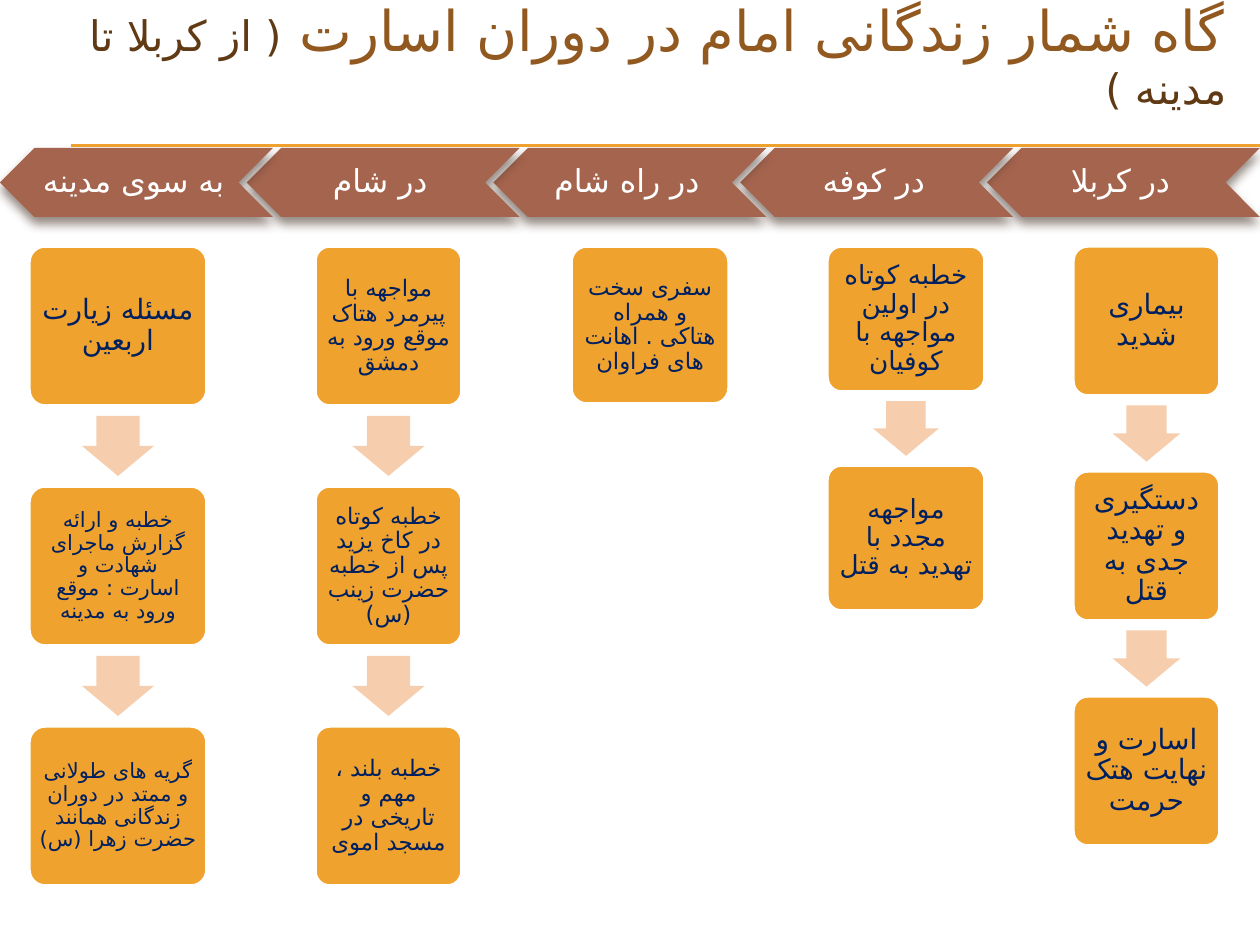
"""Build the right-to-left timeline slide of the captivity period."""
from dataclasses import dataclass
from typing import Optional

from lxml.etree import SubElement
from pptx import Presentation
from pptx.dml.color import RGBColor
from pptx.enum.shapes import MSO_CONNECTOR, MSO_SHAPE
from pptx.enum.text import MSO_ANCHOR, MSO_AUTO_SIZE, PP_ALIGN
from pptx.oxml.ns import qn
from pptx.util import Emu, Pt

GOLD = RGBColor(0xF0, 0xA2, 0x2E)
PEACH = RGBColor(0xF6, 0xCE, 0xAD)
RUST = RGBColor(0xA5, 0x64, 0x4E)
SHADOW = RGBColor(0x4E, 0x3B, 0x30)
BROWN = RGBColor(0x91, 0x58, 0x1F)
DARK_BROWN = RGBColor(0x60, 0x3A, 0x14)
NAVY = RGBColor(0x00, 0x20, 0x60)
WHITE = RGBColor(0xFF, 0xFF, 0xFF)

PERSIAN_FONT = "DejaVu Sans"
SLIDE_WIDTH, SLIDE_HEIGHT = 1260, 945
STAGE_TOP, STAGE_WIDTH, STAGE_HEIGHT = 148, 273, 69
CARD_TOP = 246


@dataclass(frozen=True)
class Event:
    """One card: its wording and text size in points."""
    wording: str
    size: int


@dataclass(frozen=True)
class Stage:
    """One stage of the journey with its column of events."""
    name: str
    left: int
    width: int
    card_height: int
    events: tuple[Event, ...]


STAGES = (
    Stage("در کربلا", 1073, 147, 150, (
        Event("بیماری شدید", 16),
        Event("دستگیری و تهدید جدی به قتل", 16),
        Event("اسارت و نهایت هتک حرمت", 16))),
    Stage("در کوفه", 827, 158, 146, (
        Event("خطبه کوتاه در اولین مواجهه با کوفیان", 15),
        Event("مواجهه مجدد با تهدید به قتل", 15))),
    Stage("در راه شام", 571, 158, 158, (
        Event("سفری سخت و همراه هتاکی . اهانت های فراوان", 13),)),
    Stage("در شام", 315, 147, 160, (
        Event("مواجهه با پیرمرد هتاک موقع ورود به دمشق", 13),
        Event("خطبه کوتاه در کاخ یزید پس از خطبه حضرت زینب (س)", 13),
        Event("خطبه بلند ، مهم و تاریخی در مسجد اموی", 13))),
    Stage("به سوی مدینه", 29, 178, 160, (
        Event("مسئله زیارت اربعین", 16),
        Event("خطبه و ارائه گزارش ماجرای شهادت و اسارت : موقع ورود به مدینه", 12),
        Event("گریه های طولانی و ممتد در دوران زندگانی همانند حضرت زهرا (س)", 12))),
)


def px(length: float) -> Emu:
    """Turn px into EMU."""
    return Emu(round(length * 914400 / 126))


def add_run(paragraph, wording: str, size: int, font: str, color: RGBColor) -> None:
    """Add a run with its Latin font and the Persian one."""
    run = paragraph.add_run()
    run.text = wording
    run.font.size = Pt(size)
    run.font.name = font
    run.font.color.rgb = color
    SubElement(run.font._element, qn("a:cs"), typeface=PERSIAN_FONT)


def write(shape, wording: str, size: int, color: RGBColor,
          insets: tuple[int, int, int, int]) -> None:
    """Write one centred right-to-left paragraph inside a shape."""
    frame = shape.text_frame
    frame.word_wrap = True
    frame.vertical_anchor = MSO_ANCHOR.MIDDLE
    frame.margin_left, frame.margin_top, frame.margin_right, frame.margin_bottom = map(px, insets)
    paragraph = frame.paragraphs[0]
    paragraph.alignment = PP_ALIGN.CENTER
    paragraph.line_spacing = 0.9
    paragraph._p.get_or_add_pPr().set("rtl", "1")
    add_run(paragraph, wording, size, "Cabin", color)


def add_block(slide, kind: MSO_SHAPE, left: float, top: float, width: float, height: float,
              fill: RGBColor, outline: Optional[RGBColor] = None):
    """Add a flat filled shape, outlined when a colour is given."""
    shape = slide.shapes.add_shape(kind, px(left), px(top), px(width), px(height))
    shape.shadow.inherit = False
    shape.fill.solid()
    shape.fill.fore_color.rgb = fill
    if outline is None:
        shape.line.fill.background()
    else:
        shape.line.color.rgb = outline
        shape.line.width = Pt(2)
    return shape


def add_stage_header(slide, stage: Stage, left: float) -> None:
    """Add a left-pointing chevron with a soft shadow below."""
    header = add_block(slide, MSO_SHAPE.CHEVRON, left, STAGE_TOP, STAGE_WIDTH, STAGE_HEIGHT, RUST)
    properties = header._element.spPr
    properties.find(qn("a:xfrm")).set("flipH", "1")
    shadow = SubElement(properties.find(qn("a:effectLst")), qn("a:outerShdw"),
                        blurRad=str(Pt(6)), dist=str(Pt(4)), dir="5400000", rotWithShape="0")
    tint = SubElement(shadow, qn("a:srgbClr"), val=str(SHADOW))
    SubElement(tint, qn("a:alpha"), val="60000")
    write(header, stage.name, 18, WHITE, (4, 4, 10, 4))


def add_events(slide, stage: Stage) -> None:
    """Stack the cards of a stage, with an arrow in each gap."""
    height = stage.card_height
    arrow_width, arrow_height = 0.45 * height, 0.375 * height
    for row, event in enumerate(stage.events):
        top = CARD_TOP + 1.5 * height * row
        if row:
            arrow = add_block(slide, MSO_SHAPE.DOWN_ARROW,
                              stage.left + (stage.width - arrow_width) / 2,
                              top - (0.5 * height + arrow_height) / 2,
                              arrow_width, arrow_height, PEACH)
            arrow.adjustments[0] = 0.6
            arrow.adjustments[1] = 0.5
        card = add_block(slide, MSO_SHAPE.ROUNDED_RECTANGLE, stage.left, top,
                         stage.width, height, GOLD, WHITE)
        card.adjustments[0] = 0.1
        inset = round(0.525 * event.size)
        write(card, event.wording, event.size, NAVY, (inset,) * 4)


def add_rule(slide, top: int) -> None:
    """Add a thin gold rule below the title."""
    rule = slide.shapes.add_connector(MSO_CONNECTOR.STRAIGHT, px(71), px(top),
                                      px(SLIDE_WIDTH), px(top))
    rule.line.color.rgb = GOLD
    rule.line.width = Pt(0.75)
    SubElement(rule._element.spPr, qn("a:effectLst"))


def fill_title(title) -> None:
    """Place and write the slide title."""
    title.left, title.top, title.width, title.height = map(px, (42, 0, 1197, 108))
    frame = title.text_frame
    frame.word_wrap = True
    frame.auto_size = MSO_AUTO_SIZE.NONE
    frame.vertical_anchor = MSO_ANCHOR.MIDDLE
    paragraph = frame.paragraphs[0]
    paragraph.alignment = PP_ALIGN.RIGHT
    paragraph._p.get_or_add_pPr().set("rtl", "1")
    add_run(paragraph, "گاه شمار زندگانی امام در دوران اسارت ", 32, "Calibri", BROWN)
    add_run(paragraph, "( از کربلا تا مدینه )", 24, "Calibri", DARK_BROWN)


def main() -> None:
    """Build and save the presentation."""
    presentation = Presentation()
    presentation.slide_width = px(SLIDE_WIDTH)
    presentation.slide_height = px(SLIDE_HEIGHT)
    slide = presentation.slides.add_slide(presentation.slide_layouts[5])
    fill_title(slide.shapes.title)
    for top in (145, 146):
        add_rule(slide, top)
    last_left = SLIDE_WIDTH - STAGE_WIDTH
    for position, stage in enumerate(STAGES):
        add_stage_header(slide, stage, last_left * (1 - position / (len(STAGES) - 1)))
    for stage in STAGES:
        add_events(slide, stage)
    presentation.save("out.pptx")


if __name__ == "__main__":
    main()
